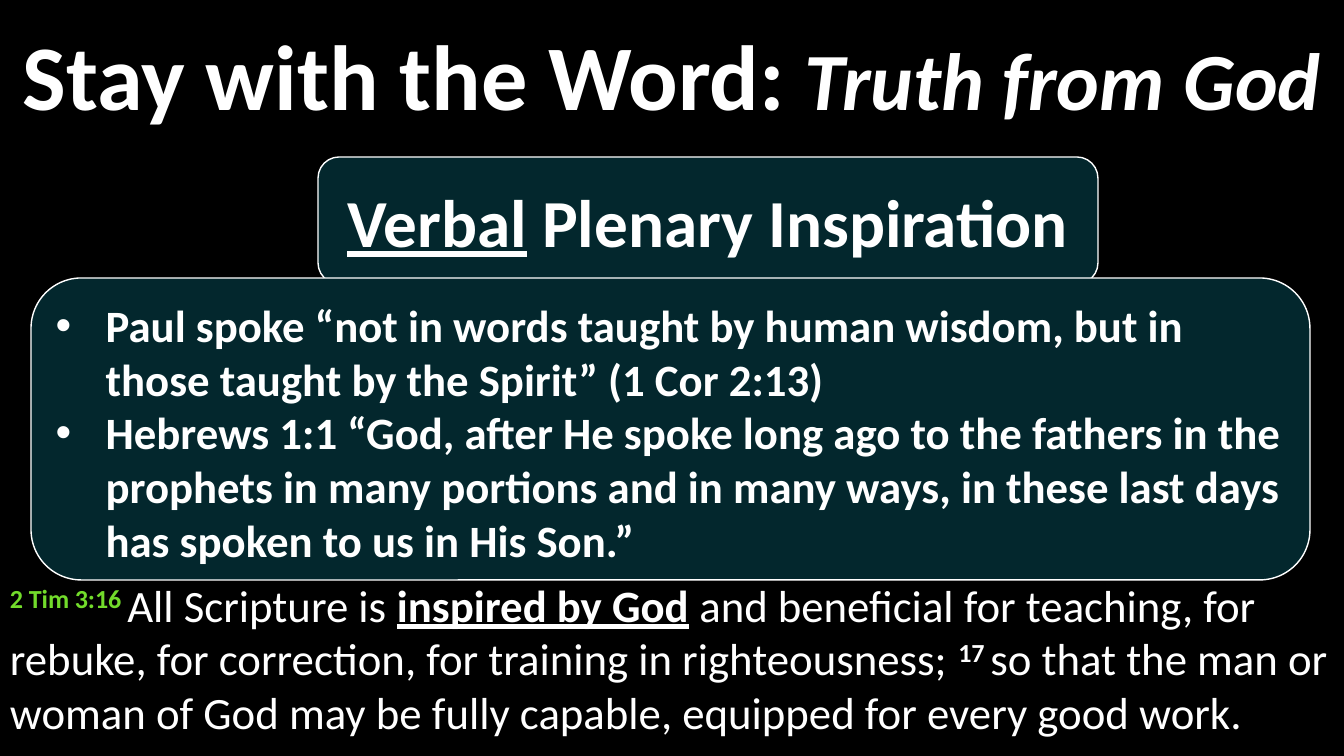
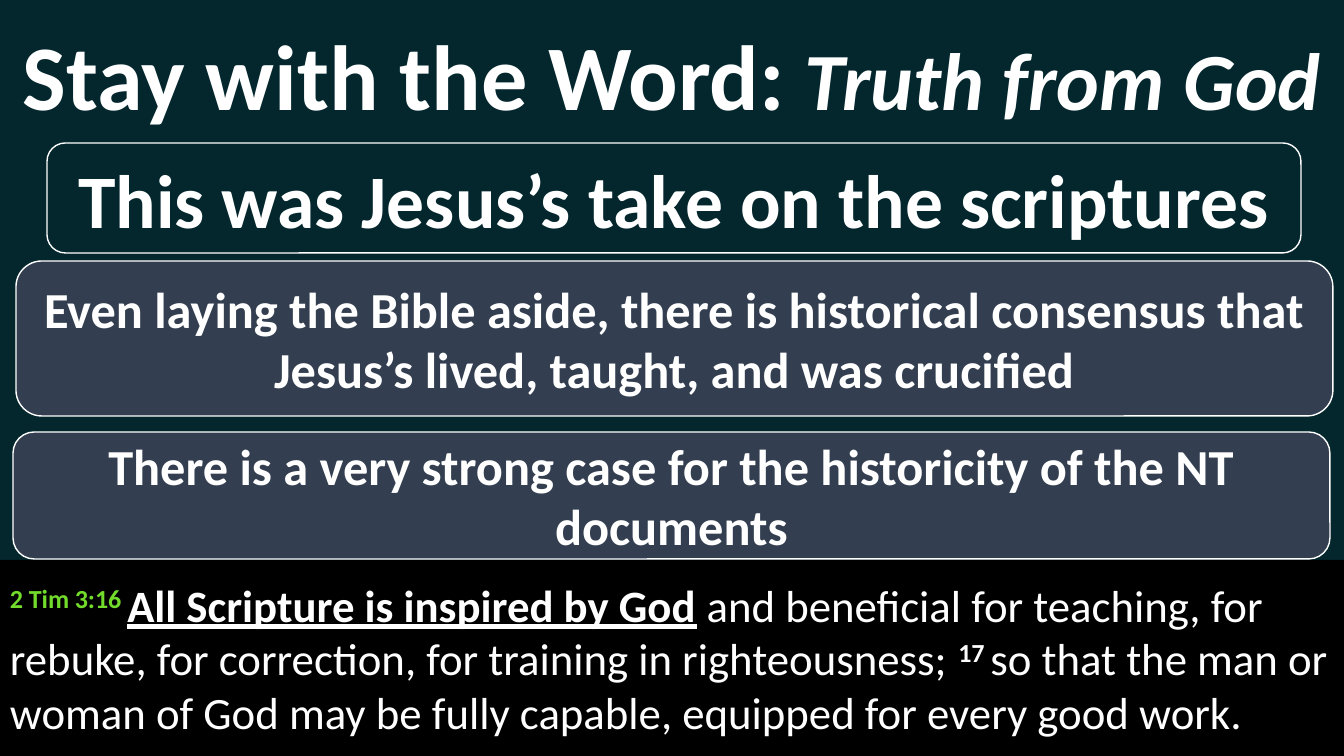
from lxml import etree
from pptx import Presentation, util as u
from pptx.dml.color import RGBColor
from pptx.enum import shapes, text
from pptx.oxml import ns

PX = 914400 / 100.8
WIDTH, HEIGHT = 1344, 756
FONT = "Calibri"
COLORS = {
    "black": "000000",
    "white": "FFFFFF",
    "teal": "03272D",
    "slate": "333F50",
    "green": "72DB2B",
}


def px(n):
    return u.Emu(round(n * PX))


def rgb(name):
    return RGBColor.from_string(COLORS[name])


def add_run(p, words, size=32, color="white", bold=True, italic=False,
            underline=False, raised=False):
    r = p.add_run()
    r.text = words
    f = r.font
    f.name, f.size, f.bold, f.italic = FONT, u.Pt(size), bold, italic
    f.underline = underline
    f.color.rgb = rgb(color)
    if raised:
        r._r.get_or_add_rPr().set("baseline", "30000")


def add_bullet(p, indent=50):
    pPr = p._p.get_or_add_pPr()
    pPr.set("marL", str(px(indent)))
    pPr.set("indent", str(px(-indent)))
    etree.SubElement(pPr, ns.qn("a:buFont")).set("typeface", "Arial")
    etree.SubElement(pPr, ns.qn("a:buChar")).set("char", "•")


def add_box(s, box, kind, fill, line=None):
    sp = s.shapes.add_shape(kind, *map(px, box))
    sp.shadow.inherit = False
    sp.fill.solid()
    sp.fill.fore_color.rgb = rgb(fill)
    if line:
        sp.line.color.rgb = rgb(line)
        sp.line.width = u.Pt(1)
    else:
        sp.line.fill.background()
    tf = sp.text_frame
    tf.word_wrap = True
    tf.vertical_anchor = text.MSO_ANCHOR.MIDDLE
    return tf


def add_label(s, box):
    tf = s.shapes.add_textbox(*map(px, box)).text_frame
    tf.word_wrap = True
    tf.auto_size = text.MSO_AUTO_SIZE.SHAPE_TO_FIT_TEXT
    return tf.paragraphs[0]


# Title: bold heading with an italic subtitle to its right
def add_title(s, box=(0, 13, WIDTH, 122)):
    left, top, width, height = box
    p = add_label(s, box)
    add_run(p, " ", size=40)
    add_run(p, "Stay with the Word:", size=66)
    p = add_label(s, (left + 795, top + 11, 556, height - 13))
    add_run(p, "Truth from God", size=58, italic=True)


# Verse band along the bottom; lead is the list of runs that opens it
def add_verse(s, lead, box=(0, 560, WIDTH, 196)):
    p = add_box(s, box, shapes.MSO_SHAPE.RECTANGLE, "black").paragraphs[0]
    p.alignment = text.PP_ALIGN.LEFT
    add_run(p, "2 Tim 3:16 ", color="green", raised=True)
    for words, style in lead:
        add_run(p, words, **style)
    add_run(p, " and beneficial for teaching, for rebuke, for correction, "
               "for training in righteousness; ", bold=False)
    add_run(p, "17 ", raised=True)
    add_run(p, "so that the man or woman of God may be fully capable, "
               "equipped for every good work.", bold=False)


# Rounded panel with one centred statement
def add_panel(s, box, runs, size, fill="teal"):
    tf = add_box(s, box, shapes.MSO_SHAPE.ROUNDED_RECTANGLE, fill, "white")
    p = tf.paragraphs[0]
    p.alignment = text.PP_ALIGN.CENTER
    for words, style in runs:
        add_run(p, words, size=size, **style)


# Rounded panel with a bulleted list
def add_list_panel(s, box, items):
    tf = add_box(s, box, shapes.MSO_SHAPE.ROUNDED_RECTANGLE, "teal", "white")
    tf.vertical_anchor = text.MSO_ANCHOR.TOP
    for i, item in enumerate(items):
        p = tf.add_paragraph() if i else tf.paragraphs[0]
        p.alignment = text.PP_ALIGN.LEFT
        add_bullet(p)
        add_run(p, item)


def new_slide(prs, background, verse_lead):
    s = prs.slides.add_slide(prs.slide_layouts[6])
    s.background.fill.solid()
    s.background.fill.fore_color.rgb = rgb(background)
    add_verse(s, verse_lead)
    add_title(s)
    return s


def inspiration_slide(prs):
    s = new_slide(prs, "black", [
        ("All Scripture is ", {"bold": False}),
        ("inspired by God", {"underline": True}),
    ])
    add_panel(s, (318, 157, 780, 127), [
        ("Verbal", {"underline": True}),
        (" Plenary Inspiration", {}),
    ], size=48)
    add_list_panel(s, (31, 278, 1279, 302), [
        "Paul spoke “not in words taught by human wisdom, but in those "
        "taught by the Spirit” (1 Cor 2:13)",
        "Hebrews 1:1 “God, after He spoke long ago to the fathers in the "
        "prophets in many portions and in many ways, in these last days "
        "has spoken to us in His Son.”",
    ])


def scriptures_slide(prs):
    s = new_slide(prs, "teal", [
        ("All Scripture is inspired by God", {"underline": True}),
    ])
    panels = [
        ((47, 143, 1254, 110), "This was Jesus’s take on the scriptures",
         54, "teal"),
        ((16, 261, 1317, 155), "Even laying the Bible aside, there is "
         "historical consensus that Jesus’s lived, taught, and was crucified",
         36, "slate"),
        ((13, 432, 1317, 127), "There is a very strong case for the "
         "historicity of the NT documents", 36, "slate"),
    ]
    for box, words, size, fill in panels:
        add_panel(s, box, [(words, {})], size, fill)


def main():
    prs = Presentation()
    prs.slide_width, prs.slide_height = px(WIDTH), px(HEIGHT)
    inspiration_slide(prs)
    scriptures_slide(prs)
    prs.save("out.pptx")


if __name__ == "__main__":
    main()
